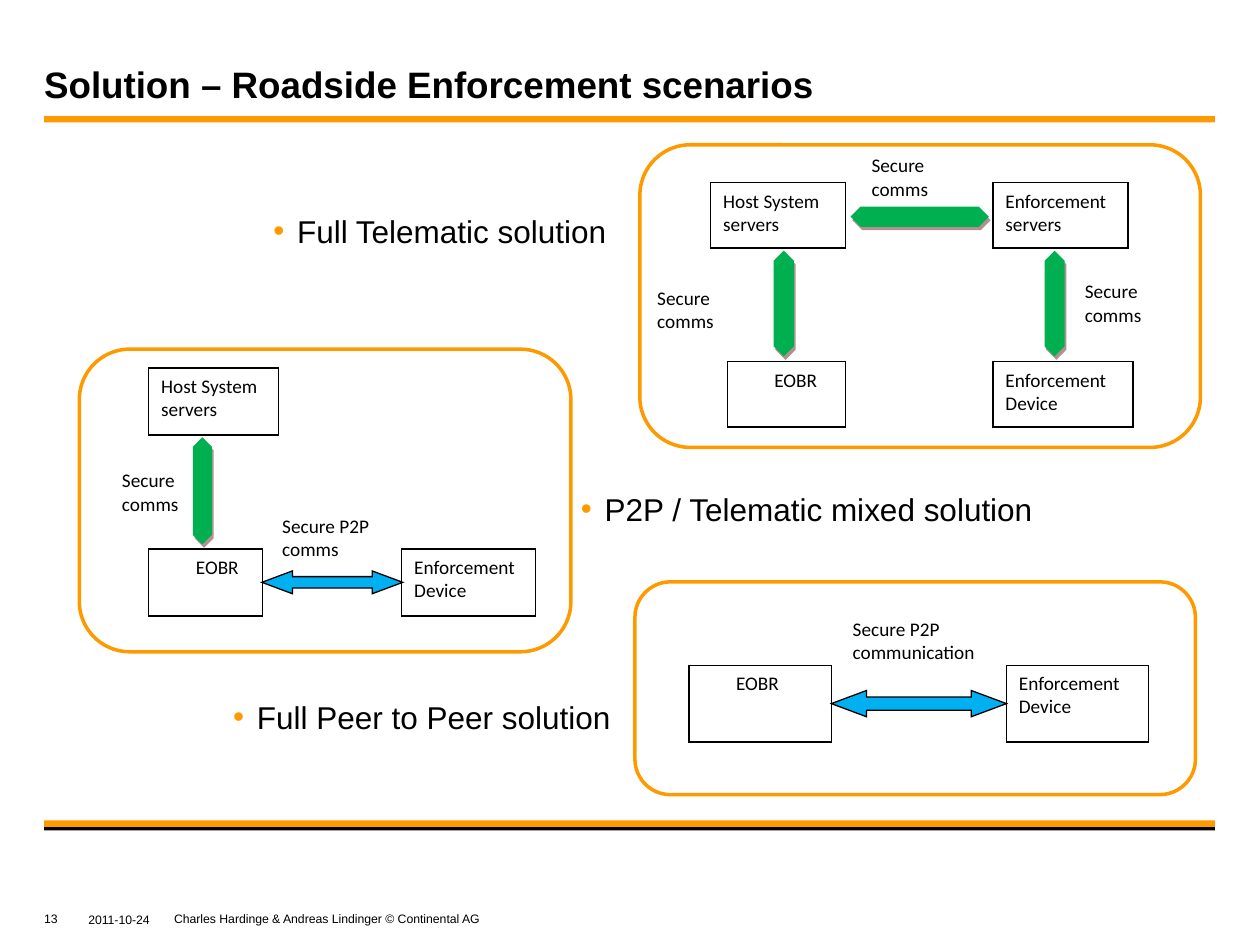
from lxml import etree
from pptx import Presentation
from pptx.dml.color import RGBColor
from pptx.enum.shapes import MSO_SHAPE as SHAPE
from pptx.enum.text import MSO_ANCHOR as ANCHOR, PP_ALIGN as ALIGN
from pptx.oxml.ns import qn
from pptx.util import Cm, Pt

BLACK, WHITE, ORANGE = "000000", "FFFFFF", "FF9900"
GREEN, BLUE, SHADOW = "00B050", "00B0F0", "622423"
MARGIN, CONTENT_W = 0.89, 23.6


def color(hex_value):
    return RGBColor.from_string(hex_value)


def add_xml(parent, tag, **attrs):
    return etree.SubElement(parent, qn(tag), {k: str(v) for k, v in attrs.items()})


def write(tf, text, size=11, font="Calibri", bold=False, align=ALIGN.LEFT,
          anchor=ANCHOR.TOP, insets=(0.25, 0.13, 0.25, 0.13), after=0, bullet=False):
    """Fill a text frame with one formatted paragraph; insets are in cm."""
    tf.word_wrap = True
    tf.vertical_anchor = anchor
    tf.margin_left, tf.margin_top, tf.margin_right, tf.margin_bottom = map(Cm, insets)
    p = tf.paragraphs[0]
    p.alignment = align
    p.space_after = Pt(after)
    if bullet:
        pPr = p._p.get_or_add_pPr()
        indent = Cm(0.48)
        pPr.set("marL", str(indent))
        pPr.set("indent", str(-indent))
        add_xml(add_xml(pPr, "a:buClr"), "a:srgbClr", val=ORANGE)
        add_xml(pPr, "a:buFont", typeface="Arial")
        add_xml(pPr, "a:buChar", char="•")
    r = p.add_run()
    r.text = text
    r.font.size, r.font.name, r.font.bold = Pt(size), font, bold
    r.font.color.rgb = color(BLACK)


def add_shape(s, kind, box, fill=None, line=None, width=0.75):
    sp = s.shapes.add_shape(kind, *map(Cm, box))
    sp.shadow.inherit = False
    if fill:
        sp.fill.solid()
        sp.fill.fore_color.rgb = color(fill)
    else:
        sp.fill.background()
    if line:
        sp.line.color.rgb = color(line)
        sp.line.width = Pt(width)
        add_xml(sp.line._get_or_add_ln(), "a:miter", lim=800000)
    else:
        sp.line.fill.background()
    return sp


def add_text(s, text, box, **fmt):
    tb = s.shapes.add_textbox(*map(Cm, box))
    write(tb.text_frame, text, font="Arial", **fmt)


def add_bullet(s, text, box):
    add_text(s, text, box, size=18, insets=(0, 0.05, 0, 0.05), after=12, bullet=True)


def add_footer(s, text, box, **fmt):
    add_text(s, text, box, size=7, anchor=ANCHOR.MIDDLE, insets=(0, 0, 0, 0), **fmt)


def add_node(s, text, box, line=BLACK):
    sp = add_shape(s, SHAPE.RECTANGLE, box, WHITE, line)
    left = 0.95 if text == "EOBR" else 0.25
    write(sp.text_frame, text, insets=(left, 0.13, 0.25, 0.13))


def add_label(s, text, box):
    add_node(s, text, box, line=WHITE)


def add_secure_arrow(s, box, head=1.31, rotation=0):
    sp = add_shape(s, SHAPE.UP_DOWN_ARROW, box, GREEN, GREEN, 3)
    sp.adjustments[0], sp.adjustments[1] = 0.5, head
    sp.rotation = rotation
    effects = sp._element.spPr.find(qn("a:effectLst"))
    shadow = add_xml(effects, "a:outerShdw", blurRad=0, dist=Pt(2.2),
                     dir=63 * 60000, rotWithShape=0)
    add_xml(add_xml(shadow, "a:srgbClr", val=SHADOW), "a:alpha", val=50000)


def add_p2p_arrow(s, box):
    sp = add_shape(s, SHAPE.LEFT_RIGHT_ARROW, box, BLUE, BLACK)
    sp.adjustments[0], sp.adjustments[1] = 0.5, 1.34


def add_frame(s, box):
    add_shape(s, SHAPE.ROUNDED_RECTANGLE, box, line=ORANGE, width=2)


def add_page_furniture(s):
    for top, height, fill in ((16.64, 0.1, BLACK), (16.54, 0.13, ORANGE), (2.34, 0.13, ORANGE)):
        add_shape(s, SHAPE.RECTANGLE, (MARGIN, top, CONTENT_W, height), fill)
    add_text(s, "Solution – Roadside Enforcement scenarios", (MARGIN, 0.33, CONTENT_W, 1.8),
             size=21, bold=True, anchor=ANCHOR.BOTTOM, insets=(0, 0, 0.25, 0))
    add_footer(s, "13", (MARGIN, 18.31, 0.61, 0.41))
    add_footer(s, "2011-10-24", (1.7, 18.34, 1.4, 0.41), align=ALIGN.CENTER)
    add_footer(s, "Charles Hardinge & Andreas Lindinger © Continental AG",
               (3.51, 18.31, 11.61, 0.41))


def add_telematic(s):
    top, bottom, height = 3.68, 7.29, 1.32
    add_node(s, "EOBR", (14.66, bottom, 2.39, height))
    add_node(s, "Host System servers", (14.33, top, 2.72, height))
    add_node(s, "Enforcement servers", (20.02, top, 2.72, height))
    add_node(s, "Enforcement Device", (20.02, bottom, 2.82, height))
    for left in (15.65, 21.11):
        add_secure_arrow(s, (left, 5.13, 0.3, 1.98))
    add_secure_arrow(s, (18.39, 3.05, 0.3, 2.64), head=1.83, rotation=90)
    for left, y in ((13, 5.64), (17.32, 2.97), (21.62, 5.51)):
        add_label(s, "Secure comms", (left, y, 2.51, 1.12))
    add_frame(s, (12.9, 2.92, 11.3, 6.1))
    add_bullet(s, "Full Telematic solution", (5.51, 4.22, 7.29, 1.5))


def add_mixed(s):
    left, bottom, height = 3, 11.07, 1.35
    add_label(s, "Secure comms", (2.21, 9.32, 2.41, 1.12))
    add_node(s, "EOBR", (left, bottom, 2.29, height))
    add_node(s, "Host System servers", (left, 7.42, 2.62, height))
    add_secure_arrow(s, (3.94, 8.89, 0.28, 2.01))
    add_node(s, "Enforcement Device", (8.1, bottom, 2.69, height))
    add_p2p_arrow(s, (5.28, 11.51, 2.84, 0.46))
    add_label(s, "Secure P2P comms", (5.44, 10.24, 2.41, 1.12))
    add_frame(s, (1.6, 7.04, 9.91, 6.1))
    add_bullet(s, "P2P / Telematic mixed solution", (11.71, 9.83, 9.4, 1.5))


def add_peer_to_peer(s):
    for text, left in (("EOBR", 13.89), ("Enforcement Device", 20.29)):
        add_node(s, text, (left, 13.41, 2.87, 1.55))
    add_p2p_arrow(s, (16.76, 13.92, 3.53, 0.53))
    add_label(s, "Secure P2P communication", (16.94, 12.32, 3.02, 1.3))
    add_frame(s, (12.8, 11.73, 11.3, 4.29))
    add_bullet(s, "Full Peer to Peer solution", (4.7, 14.02, 8.1, 1.5))


def main():
    prs = Presentation()
    prs.slide_width, prs.slide_height = Cm(25.4), Cm(19.05)
    s = prs.slides.add_slide(prs.slide_layouts[6])
    # Title, rules and footer
    add_page_furniture(s)
    # The three scenarios
    add_telematic(s)
    add_mixed(s)
    add_peer_to_peer(s)
    prs.save("out.pptx")


if __name__ == "__main__":
    main()
